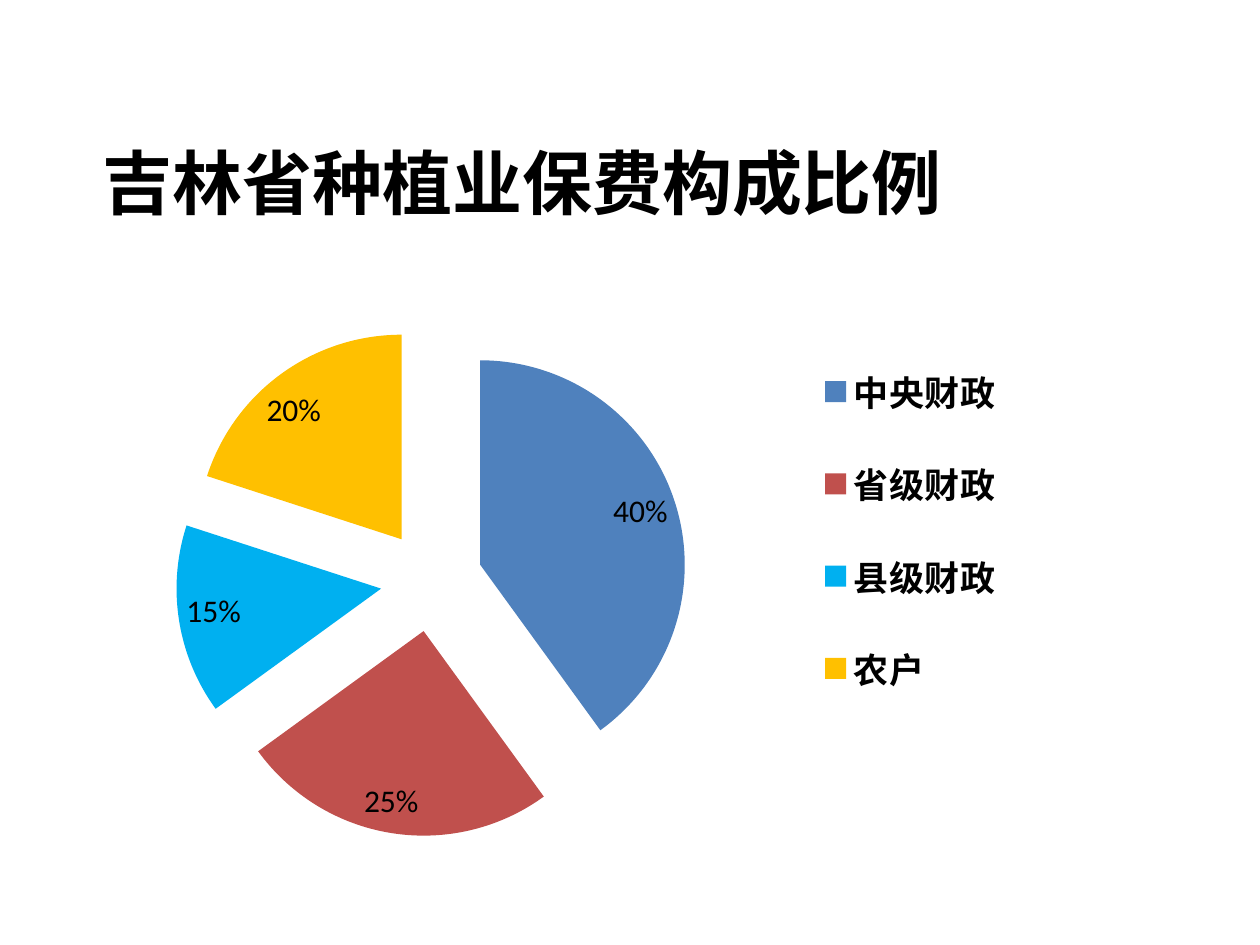
from lxml import etree
from pptx import Presentation
from pptx.chart.data import CategoryChartData
from pptx.dml.color import RGBColor
from pptx.enum.chart import XL_CHART_TYPE, XL_LABEL_POSITION, XL_LEGEND_POSITION
from pptx.enum.text import MSO_ANCHOR, PP_ALIGN
from pptx.oxml.ns import qn
from pptx.util import Inches, Pt

COLOURS = {"text": "000000", "central": "4F81BD", "province": "C0504D",
           "county": "00B0F0", "farmers": "FFC000"}
SHARES = [("中央财政", 40, "central", (0, -0.02)),
          ("省级财政", 25, "province", (-0.03, -0.01)),
          ("县级财政", 15, "county", (0, 0.02)),
          ("农户", 20, "farmers", (-0.02, 0.02))]


class SlideBuilder:
    latin = "Calibri"
    chinese = "Noto Sans CJK SC"

    def __init__(self, page):
        self.page = page

    def colour(self, name):
        return RGBColor.from_string(COLOURS[name])

    def style(self, font, size, name, bold=False):
        font.size = Pt(size)
        font.name = name
        font.bold = bold
        font.color.rgb = self.colour("text")

    def title(self, text, left, top, width, height):
        box = self.page.shapes.title
        box.left, box.top = Inches(left), Inches(top)
        box.width, box.height = Inches(width), Inches(height)
        frame = box.text_frame
        frame.text = text
        frame.vertical_anchor = MSO_ANCHOR.TOP
        frame.margin_left = frame.margin_right = 0
        paragraph = frame.paragraphs[0]
        paragraph.alignment = PP_ALIGN.CENTER
        paragraph.line_spacing = 0.9
        span = paragraph.runs[0]
        self.style(span.font, 40, self.chinese, bold=True)
        east_asian = etree.SubElement(span.font._element, qn("a:ea"))
        east_asian.set("typeface", self.chinese)

    def place(self, parent, position, bounds, modes=()):
        layout = parent.find(qn("c:layout"))
        if layout is None:
            layout = etree.Element(qn("c:layout"))
            parent.insert(position, layout)
        manual = etree.SubElement(layout, qn("c:manualLayout"))
        for tag, value in [*modes, *zip("xywh", bounds)]:
            etree.SubElement(manual, qn(f"c:{tag}")).set("val", str(value))

    def label(self, point, offset):
        label = point.data_label
        self.style(label.font, 18, self.latin)
        label.position = XL_LABEL_POSITION.INSIDE_END
        element = label._dLbl
        element.find(qn("c:showVal")).set("val", "0")
        element.find(qn("c:showPercent")).set("val", "1")
        self.place(element, 1, offset)

    def pie(self, shares, left, top, width, height):
        data = CategoryChartData()
        data.categories = [share[0] for share in shares]
        data.add_series("Series 1", [share[1] for share in shares])
        chart = self.page.shapes.add_chart(
            XL_CHART_TYPE.PIE, Inches(left), Inches(top),
            Inches(width), Inches(height), data).chart
        chart.has_title = False
        self.style(chart.font, 18, self.latin)
        edges = [("xMode", "edge"), ("yMode", "edge")]
        self.place(chart._chartSpace.chart.plotArea, 0, (0.01, 0.02, 0.75, 0.91),
                   [("layoutTarget", "inner"), *edges])

        plot = chart.plots[0]
        plot.vary_by_categories = True
        series = plot.series[0]
        explosion = etree.Element(qn("c:explosion"))
        explosion.set("val", "25")
        series._element.find(qn("c:tx")).addnext(explosion)

        labels = series.data_labels
        labels.show_percentage = True
        labels.show_value = False
        labels.number_format = "0%"
        labels.number_format_is_linked = False
        labels.position = XL_LABEL_POSITION.INSIDE_END
        self.style(labels.font, 18, self.latin)
        for leader in labels._element.findall(qn("c:showLeaderLines")):
            leader.set("val", "0")

        for index, (_, _, name, offset) in enumerate(shares):
            point = series.points[index]
            fill = point.format.fill
            fill.solid()
            fill.fore_color.rgb = self.colour(name)
            self.label(point, offset)

        chart.has_legend = True
        legend = chart.legend
        legend.position = XL_LEGEND_POSITION.RIGHT
        legend.include_in_layout = False
        self.style(legend.font, 20, self.latin, bold=True)
        self.place(legend._element, 1, (0.78, 0.02, 0.21, 0.73), edges)


def main():
    deck = Presentation()
    deck.slide_width, deck.slide_height = Inches(10), Inches(7.5)
    builder = SlideBuilder(deck.slides.add_slide(deck.slide_layouts[5]))
    builder.title("吉林省种植业保费构成比例", 0.71, 1.13, 6.87, 1.25)
    builder.pie(SHARES, 0.5, 2.49, 7.6, 4.46)
    deck.save("out.pptx")


if __name__ == "__main__":
    main()
